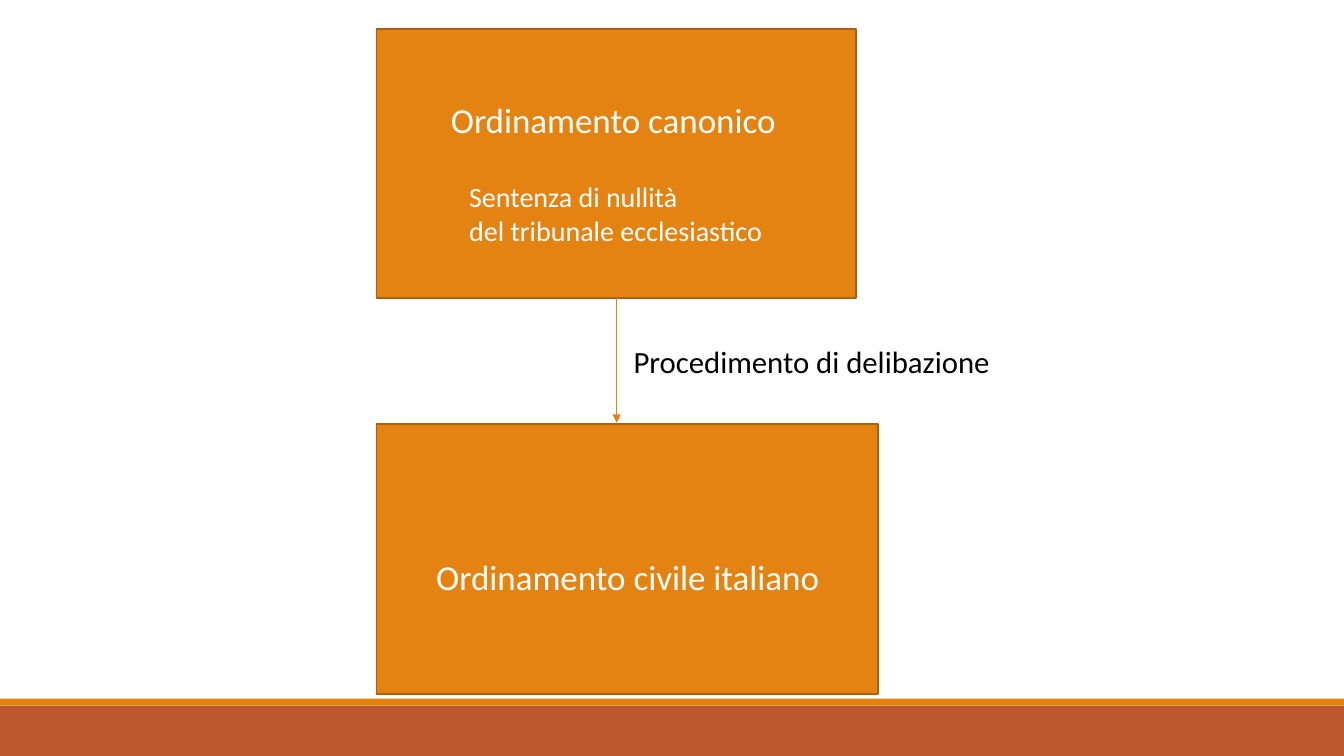
import pptx
import pptx.dml.color
import pptx.enum.shapes
import pptx.enum.text
import pptx.oxml
import pptx.oxml.ns
import pptx.util

Pt = pptx.util.Pt
ALIGN = pptx.enum.text.PP_ALIGN
COLORS = {
    "orange": "E48312",
    "outline": "A9610D",
    "rust": "BD582C",
    "white": "FFFFFF",
    "black": "000000",
}


def color(name):
    return pptx.dml.color.RGBColor.from_string(COLORS[name])


def write(frame, text, size=25, ink="white", align=ALIGN.LEFT, font="Calibri"):
    for index, line in enumerate(text.split("\n")):
        para = frame.add_paragraph() if index else frame.paragraphs[0]
        para.alignment = align
        span = para.add_run()
        span.text = line
        span.font.name = font
        span.font.size = Pt(size)
        span.font.color.rgb = color(ink)


class Diagram:
    """Draws styled blocks, arrows and labels on the current page."""

    def __init__(self, page):
        self.page = page

    def block(self, left, top, width, height, fill="orange", outline=None):
        box = self.page.shapes.add_shape(
            pptx.enum.shapes.MSO_SHAPE.RECTANGLE,
            Pt(left), Pt(top), Pt(width), Pt(height))
        box.shadow.inherit = False
        box.fill.solid()
        box.fill.fore_color.rgb = color(fill)
        if outline:
            box.line.color.rgb = color(outline)
            box.line.width = Pt(1.25)
        else:
            box.line.fill.background()

    def label(self, left, top, width, height, text, **style):
        box = self.page.shapes.add_textbox(Pt(left), Pt(top), Pt(width), Pt(height))
        box.text_frame.word_wrap = True
        write(box.text_frame, text, **style)

    def arrow(self, x, top, bottom):
        arrow = self.page.shapes.add_connector(
            pptx.enum.shapes.MSO_CONNECTOR.STRAIGHT, Pt(x), Pt(top), Pt(x), Pt(bottom))
        arrow.line.color.rgb = color("orange")
        arrow.line.width = Pt(1)
        namespace = pptx.oxml.ns.nsdecls("a")
        arrow.line._get_or_add_ln().append(
            pptx.oxml.parse_xml(f'<a:tailEnd {namespace} type="triangle"/>'))
        arrow._element.spPr.append(pptx.oxml.parse_xml(f"<a:effectLst {namespace}/>"))


def main():
    deck = pptx.Presentation()
    deck.slide_width, deck.slide_height = Pt(960), Pt(540)
    diagram = Diagram(deck.slides.add_slide(deck.slide_layouts[6]))

    diagram.block(0, 504, 960, 36, fill="rust")
    diagram.block(0, 499, 960, 5)

    diagram.block(269, 20.5, 342.5, 192.5, outline="outline")
    diagram.label(328, 125, 402.5, 55.5,
                  "Sentenza di nullità\ndel tribunale ecclesiastico",
                  size=20, align=ALIGN.JUSTIFY)
    diagram.label(315, 66.5, 261, 37.5, "Ordinamento canonico")

    diagram.block(269, 303, 358, 192.5, outline="outline")
    diagram.arrow(440.5, 213, 302)
    diagram.label(445.5, 241.5, 299.5, 34, "Procedimento di delibazione",
                  size=22, ink="black")
    diagram.label(304.5, 393, 306.5, 37.5, "Ordinamento civile italiano")

    deck.save("out.pptx")


if __name__ == "__main__":
    main()
